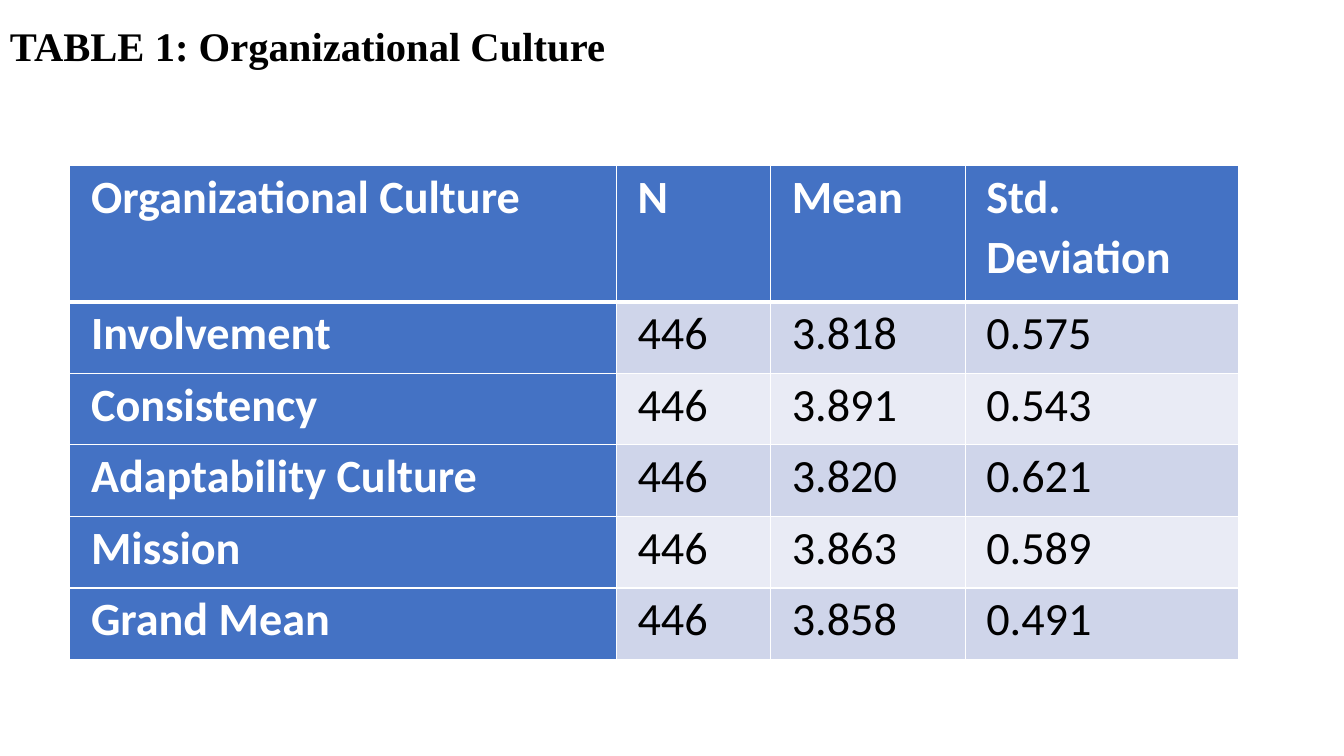
from lxml.etree import SubElement
from pptx import Presentation
from pptx.dml.color import RGBColor
from pptx.enum.text import MSO_ANCHOR
from pptx.oxml.ns import qn
from pptx.util import Inches, Pt

WHITE = RGBColor(0xFF, 0xFF, 0xFF)
BLACK = RGBColor(0x00, 0x00, 0x00)
BLUE = RGBColor(0x44, 0x72, 0xC4)
BANDS = (RGBColor(0xE9, 0xEB, 0xF5), RGBColor(0xCF, 0xD5, 0xEA))

CULTURE_SCORES = (
    ("Organizational Culture", "N", "Mean", "Std. Deviation"),
    ("Involvement", "446", "3.818", "0.575"),
    ("Consistency", "446", "3.891", "0.543"),
    ("Adaptability Culture", "446", "3.820", "0.621"),
    ("Mission", "446", "3.863", "0.589"),
    ("Grand Mean", "446", "3.858", "0.491"),
)
COLUMN_WIDTHS = (40.66, 11.48, 14.48, 20.33)
ROW_HEIGHTS = (18,) + (9.47,) * 5


class CultureSlide:
    title_font, title_size = "Times New Roman", Pt(29)
    body_font, body_size = "Calibri", Pt(33)
    grid = 100

    def __init__(self, deck):
        self.column = deck.slide_width / self.grid
        self.row = deck.slide_height / self.grid
        self.slide = deck.slides.add_slide(deck.slide_layouts[6])

    def x(self, columns):
        return round(columns * self.column)

    def y(self, rows):
        return round(rows * self.row)

    def add_wording(self, frame, wording, font, size, color, bold, spacing):
        paragraph = frame.paragraphs[0]
        paragraph.line_spacing = spacing
        run = paragraph.add_run()
        run.text = wording
        run.font.name = font
        run.font.size = size
        run.font.bold = bold
        run.font.color.rgb = color

    def title(self, wording, left, top, width, height):
        heading = self.slide.shapes.add_textbox(
            self.x(left), self.y(top), self.x(width), self.y(height))
        frame = heading.text_frame
        frame.word_wrap = True
        frame.vertical_anchor = MSO_ANCHOR.MIDDLE
        frame.margin_bottom = Inches(0.48)
        self.add_wording(frame, wording, self.title_font, self.title_size,
                         BLACK, True, 0.9)

    def border(self, cell, side, points):
        edge = SubElement(cell._tc.get_or_add_tcPr(), qn(f"a:ln{side}"), w=str(Pt(points)))
        paint = SubElement(edge, qn("a:solidFill"))
        SubElement(paint, qn("a:srgbClr"), val=str(WHITE))

    def cell(self, cell, wording, row, column):
        cell.margin_left = cell.margin_right = Inches(0.21)
        cell.margin_top = cell.margin_bottom = 0
        heavy_side = {0: "B", 1: "T"}.get(row)
        for side in "LRTB":
            self.border(cell, side, 3 if side == heavy_side else 1)
        is_header = row == 0 or column == 0
        cell.fill.solid()
        cell.fill.fore_color.rgb = BLUE if is_header else BANDS[row % 2]
        self.add_wording(cell.text_frame, wording, self.body_font, self.body_size,
                         WHITE if is_header else BLACK, is_header, 1.07)

    def table(self, records, left, top, widths, heights):
        scores = self.slide.shapes.add_table(
            len(heights), len(widths), self.x(left), self.y(top),
            self.x(sum(widths)), self.y(sum(heights))).table
        for column, width in zip(scores.columns, widths):
            column.width = self.x(width)
        for row, height in zip(scores.rows, heights):
            row.height = self.y(height)
        for row, record in enumerate(records):
            for column, wording in enumerate(record):
                self.cell(scores.cell(row, column), wording, row, column)


def main():
    deck = Presentation()
    deck.slide_width, deck.slide_height = Inches(13.33), Inches(7.5)
    culture = CultureSlide(deck)
    culture.title("TABLE 1: Organizational Culture", 0, 0.93, 63, 16.67)
    culture.table(CULTURE_SCORES, 5.2, 21.9, COLUMN_WIDTHS, ROW_HEIGHTS)
    deck.save("out.pptx")


if __name__ == "__main__":
    main()
